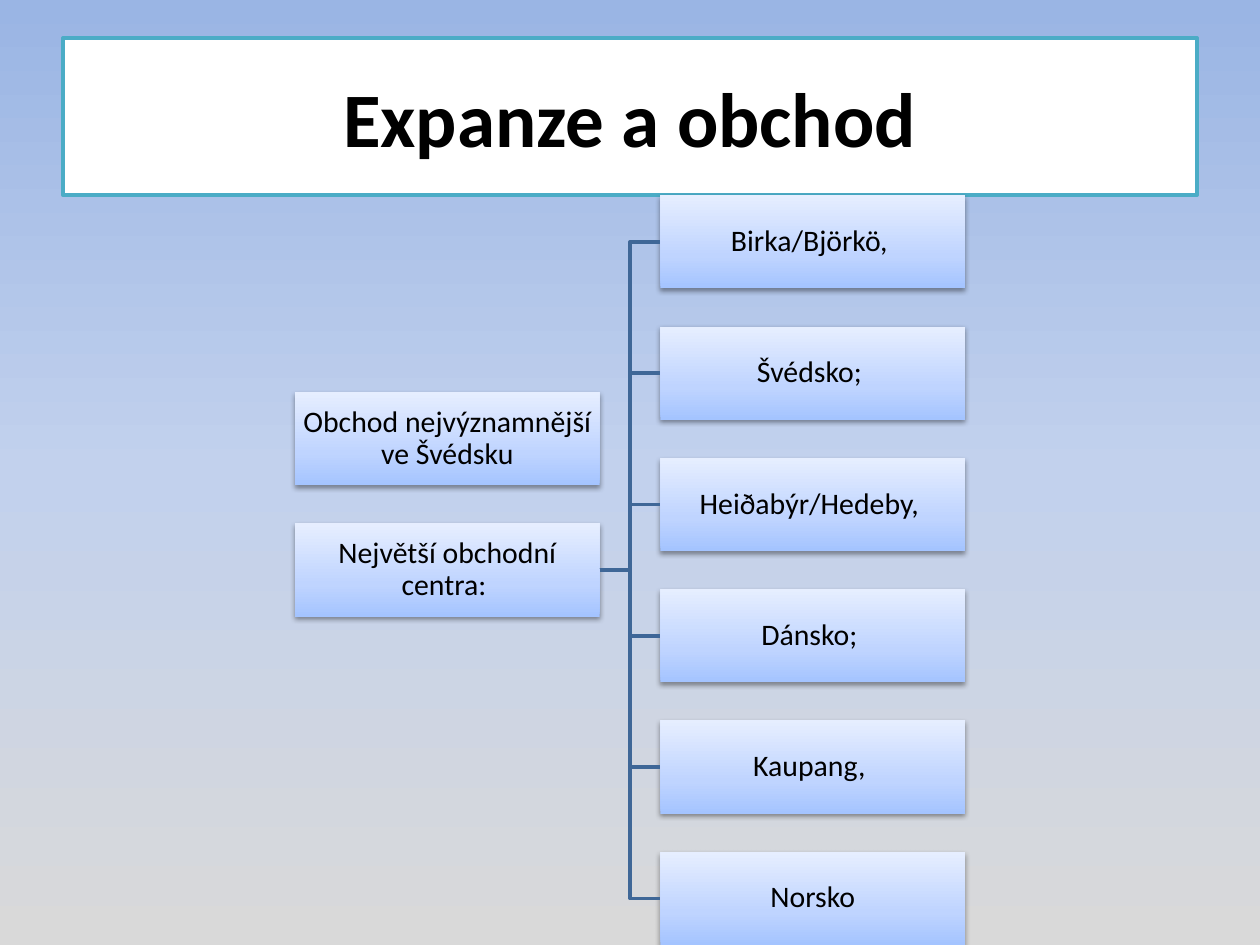
from lxml import etree
from pptx import Presentation
from pptx.dml.color import RGBColor
from pptx.enum.shapes import MSO_CONNECTOR, MSO_SHAPE
from pptx.enum.text import MSO_ANCHOR, PP_ALIGN
from pptx.oxml.ns import qn
from pptx.util import Inches, Pt

RECT = MSO_SHAPE.RECTANGLE
ELBOW = MSO_CONNECTOR.ELBOW
CENTER = PP_ALIGN.CENTER
MIDDLE = MSO_ANCHOR.MIDDLE
RIGHT_SIDE, LEFT_SIDE = 3, 1

FONT = "Calibri"
BACKGROUND_STOPS = [(0, "9AB5E4"), (50, "C2D1ED"), (100, "D9D9D9")]
BOX_STOPS = [(0, "A4C4FF"), (35, "BFD4FF"), (100, "E6EEFF")]
TOPICS = ["Obchod nejvýznamnější ve Švédsku", "Největší obchodní centra: "]
CENTRES = ["Birka/Björkö, ", "Švédsko; ", "Heiðabýr/Hedeby, ",
           "Dánsko; ", "Kaupang, ", "Norsko"]
BOX_W, BOX_H, COLUMN_GAP = 2.42, 0.74, 0.48


def color(hex_code):
    return RGBColor.from_string(hex_code)


def set_gradient(fill, element, stops, angle):
    """Fill with any number of (percent, colour) stops; angle runs counterclockwise."""
    fill.gradient()
    fill.gradient_angle = angle
    gs_list = element.find(".//" + qn("a:gsLst"))
    for gs in list(gs_list):
        gs_list.remove(gs)
    for percent, hex_code in stops:
        gs = etree.SubElement(gs_list, qn("a:gs"), pos=str(percent * 1000))
        etree.SubElement(gs, qn("a:srgbClr"), val=hex_code)


def add_soft_shadow(sp):
    sp.shadow.inherit = False
    effects = sp._element.spPr.find(qn("a:effectLst"))
    shadow = etree.SubElement(effects, qn("a:outerShdw"), blurRad=str(Pt(3.1)),
                              dist=str(Pt(1.6)), dir="5400000", rotWithShape="0")
    black = etree.SubElement(shadow, qn("a:srgbClr"), val="000000")
    etree.SubElement(black, qn("a:alpha"), val="38000")


def add_rect(s, x, y, w, h, text, size, bold=False):
    sp = s.shapes.add_shape(RECT, Inches(x), Inches(y), Inches(w), Inches(h))
    sp.shadow.inherit = False
    tf = sp.text_frame
    tf.word_wrap = True
    tf.vertical_anchor = MIDDLE
    p = tf.paragraphs[0]
    p.text = text
    p.alignment = CENTER
    p.font.name, p.font.size, p.font.bold = FONT, Pt(size), bold
    p.font.color.rgb = color("000000")
    return sp


def add_title(s, x, y, w, h):
    sp = add_rect(s, x, y, w, h, "Expanze a obchod", 44, bold=True)
    sp.fill.solid()
    sp.fill.fore_color.rgb = color("FFFFFF")
    sp.line.color.rgb = color("4BACC6")
    sp.line.width = Pt(2)


def add_box(s, x, y, text):
    sp = add_rect(s, x, y, BOX_W, BOX_H, text, 17)
    set_gradient(sp.fill, sp._element.spPr, BOX_STOPS, 90)
    sp.line.fill.background()
    add_soft_shadow(sp)
    tf = sp.text_frame
    tf.margin_left = tf.margin_right = tf.margin_top = tf.margin_bottom = Inches(0.01)
    tf.paragraphs[0].line_spacing = 0.9
    return sp


def add_branch(s, parent, child):
    line = s.shapes.add_connector(ELBOW, 0, 0, 0, 0)
    line.begin_connect(parent, RIGHT_SIDE)
    line.end_connect(child, LEFT_SIDE)
    line.line.color.rgb = color("3F6797")
    line.line.width = Pt(2)
    etree.SubElement(line._element.spPr, qn("a:effectLst"))


def add_hierarchy(s, x, y, h):
    """Two columns of boxes with one pitch, the shorter one centred on the taller."""
    pitch = (h - BOX_H) / (len(CENTRES) - 1)
    topics_y = y + pitch * (len(CENTRES) - len(TOPICS) - 1) / 2
    centres_x = x + BOX_W + COLUMN_GAP
    topics = [add_box(s, x, topics_y + i * pitch, text)
              for i, text in enumerate(TOPICS)]
    centres = [add_box(s, centres_x, y + i * pitch, text)
               for i, text in enumerate(CENTRES)]
    for centre in centres:
        add_branch(s, topics[-1], centre)


def main():
    prs = Presentation()
    prs.slide_width, prs.slide_height = Inches(10), Inches(7.5)
    s = prs.slides.add_slide(prs.slide_layouts[6])
    set_gradient(s.background.fill, s._element, BACKGROUND_STOPS, 270)
    add_title(s, 0.5, 0.3, 9, 1.25)
    add_hierarchy(s, 2.34, 1.55, 5.95)
    prs.save("out.pptx")


if __name__ == "__main__":
    main()
